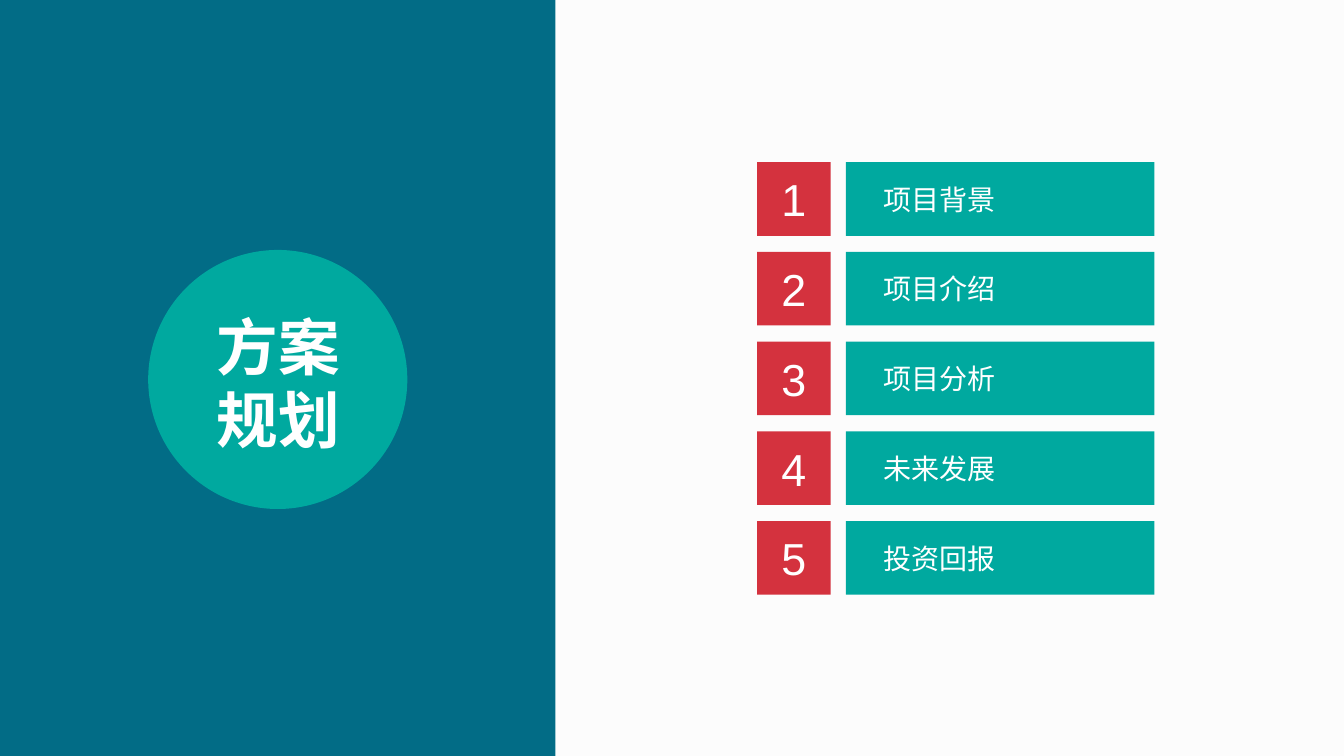
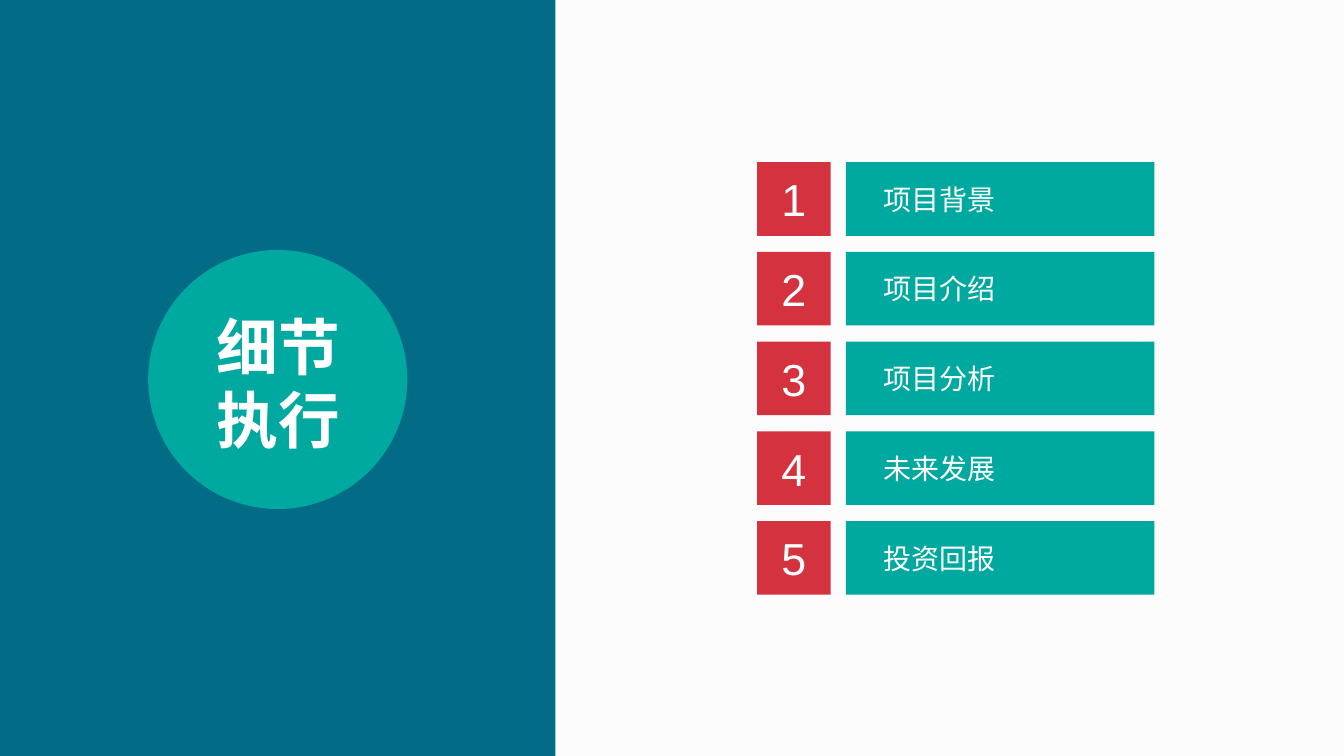
"""Build two section slides, each with a round heading and a numbered agenda."""
from dataclasses import dataclass

from lxml.etree import SubElement
from pptx import Presentation
from pptx.dml.color import RGBColor
from pptx.enum.shapes import MSO_SHAPE
from pptx.enum.text import MSO_ANCHOR, MSO_AUTO_SIZE, PP_ALIGN
from pptx.oxml.ns import qn
from pptx.util import Pt

EMU_PER_PX = 9144
SLIDE_WIDTH, SLIDE_HEIGHT = 1333, 750
PANEL_WIDTH = 551
CIRCLE_TOP, CIRCLE_SIZE = 248, 257
HEADING_BOX = (204, 301, 144, 158)
ROW_TOP, ROW_PITCH, ROW_HEIGHT = 161, 89, 73
NUMBER_LEFT = 751
BAR_LEFT, BAR_WIDTH, BAR_INDENT = 839, 306, 37

HEADINGS = [("方案", "规划"), ("细节", "执行")]
AGENDA = ["项目背景", "项目介绍", "项目分析", "未来发展", "投资回报"]


@dataclass(frozen=True)
class Theme:
    background: str = "FCFCFC"
    panel: str = "026C86"
    accent: str = "00A99F"
    number: str = "D4323E"
    text: str = "FFFFFF"
    chinese_font: str = "Noto Sans CJK SC"
    digit_font: str = "Arial"
    heading_size: int = 44
    heading_spacing: int = 52
    number_size: int = 32
    item_size: int = 20


THEME = Theme()


def px(length):
    return length * EMU_PER_PX


def write_text(shape, *lines, size, font=THEME.chinese_font, bold=False,
               align=PP_ALIGN.CENTER, spacing=None, indent=0, wrap=False):
    frame = shape.text_frame
    frame.text = "\n".join(lines)
    frame.word_wrap = wrap
    frame.auto_size = MSO_AUTO_SIZE.NONE
    frame.vertical_anchor = MSO_ANCHOR.MIDDLE
    frame.margin_left = px(indent)
    frame.margin_right = frame.margin_top = frame.margin_bottom = 0
    for paragraph in frame.paragraphs:
        paragraph.alignment = align
        if spacing:
            paragraph.line_spacing = Pt(spacing)
        for run in paragraph.runs:
            run.font.size = Pt(size)
            run.font.bold = bold
            run.font.name = font
            run.font.color.rgb = RGBColor.from_string(THEME.text)
            SubElement(run.font._element, qn("a:ea"), typeface=font)


def add_block(shapes, left, top, width, height, color, kind=MSO_SHAPE.RECTANGLE):
    block = shapes.add_shape(kind, px(left), px(top), px(width), px(height))
    block.shadow.inherit = False
    block.fill.solid()
    block.fill.fore_color.rgb = RGBColor.from_string(color)
    block.line.fill.background()
    return block


def add_heading(slide, lines):
    add_block(slide.shapes, 0, 0, PANEL_WIDTH, SLIDE_HEIGHT, THEME.panel)
    add_block(slide.shapes, (PANEL_WIDTH - CIRCLE_SIZE) // 2, CIRCLE_TOP,
              CIRCLE_SIZE, CIRCLE_SIZE, THEME.accent, MSO_SHAPE.OVAL)
    title = slide.shapes.title
    title.left, title.top, title.width, title.height = map(px, HEADING_BOX)
    write_text(title, *lines, size=THEME.heading_size, bold=True,
               spacing=THEME.heading_spacing)
    title.element.getparent().append(title.element)


def add_agenda_row(slide, number, item):
    top = ROW_TOP + (number - 1) * ROW_PITCH
    row = slide.shapes.add_group_shape().shapes
    bar = add_block(row, BAR_LEFT, top, BAR_WIDTH, ROW_HEIGHT, THEME.accent)
    write_text(bar, item, size=THEME.item_size, align=PP_ALIGN.JUSTIFY,
               indent=BAR_INDENT, wrap=True)
    badge = add_block(row, NUMBER_LEFT, top, ROW_HEIGHT, ROW_HEIGHT, THEME.number)
    write_text(badge, str(number), size=THEME.number_size, font=THEME.digit_font)


def main():
    deck = Presentation()
    deck.slide_width, deck.slide_height = px(SLIDE_WIDTH), px(SLIDE_HEIGHT)
    backdrop = deck.slide_master.background.fill
    backdrop.solid()
    backdrop.fore_color.rgb = RGBColor.from_string(THEME.background)
    title_only = deck.slide_layouts.get_by_name("Title Only")
    for heading in HEADINGS:
        slide = deck.slides.add_slide(title_only)
        add_heading(slide, heading)
        for number, item in enumerate(AGENDA, start=1):
            add_agenda_row(slide, number, item)
    deck.save("out.pptx")


if __name__ == "__main__":
    main()
